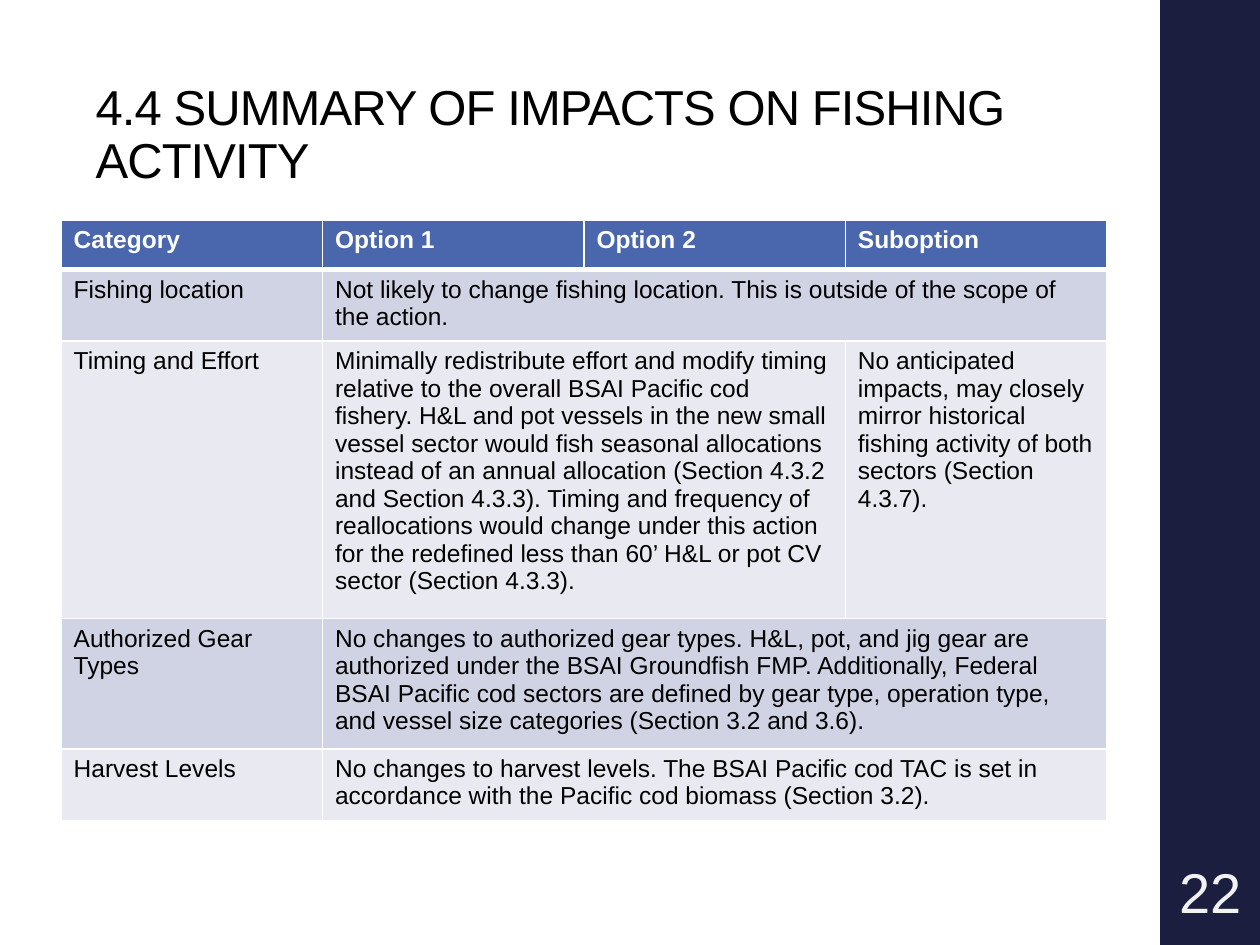
from typing import NamedTuple

from lxml.etree import SubElement
from pptx import Presentation
from pptx.dml.color import RGBColor
from pptx.enum.shapes import MSO_SHAPE
from pptx.enum.text import MSO_ANCHOR as Anchor, PP_ALIGN as Align
from pptx.oxml.ns import qn
from pptx.util import Pt

WHITE = RGBColor(0xFF, 0xFF, 0xFF)
BLACK = RGBColor(0, 0, 0)
NAVY = RGBColor(0x1B, 0x1E, 0x3E)
HEADER_BLUE = RGBColor(0x4A, 0x66, 0xAC)
BANDS = (RGBColor(0xD0, 0xD3, 0xE3), RGBColor(0xE9, 0xEA, 0xF1))
PALE_GREY = RGBColor(0xF2, 0xF2, 0xF2)
FONT_NAME = "Arial"
COLUMN_WIDTH = 149.4


class Entry(NamedTuple):
    text: str
    span: int = 1


class ImpactRow(NamedTuple):
    height: float
    entries: tuple[Entry, ...]


HEADER = ImpactRow(28.5, tuple(
    Entry(name) for name in ("Category", "Option 1", "Option 2", "Suboption")))
IMPACTS = (
    ImpactRow(38.5, (
        Entry("Fishing location"),
        Entry("Not likely to change fishing location. This is outside of the "
              "scope of the action.", 3))),
    ImpactRow(149, (
        Entry("Timing and Effort"),
        Entry("Minimally redistribute effort and modify timing relative to the "
              "overall BSAI Pacific cod fishery. H&L and pot vessels in the new "
              "small vessel sector would fish seasonal allocations instead of an "
              "annual allocation (Section 4.3.2 and Section 4.3.3). Timing and "
              "frequency of reallocations would change under this action for the "
              "redefined less than 60’ H&L or pot CV sector (Section 4.3.3).", 2),
        Entry("No anticipated impacts, may closely mirror historical fishing "
              "activity of both sectors (Section 4.3.7)."))),
    ImpactRow(70, (
        Entry("Authorized Gear Types"),
        Entry("No changes to authorized gear types. H&L, pot, and jig gear are "
              "authorized under the BSAI Groundfish FMP. Additionally, Federal "
              "BSAI Pacific cod sectors are defined by gear type, operation type, "
              "and vessel size categories (Section 3.2 and 3.6).", 3))),
    ImpactRow(38.5, (
        Entry("Harvest Levels"),
        Entry("No changes to harvest levels. The BSAI Pacific cod TAC is set in "
              "accordance with the Pacific cod biomass (Section 3.2).", 3))),
)


def style(font, size: float, color: RGBColor, bold: bool = False) -> None:
    font.name, font.size, font.bold = FONT_NAME, Pt(size), bold
    font.color.rgb = color


def add_label(slide, box: tuple, text: str, size: float, color: RGBColor,
              anchor: Anchor):
    """Add a wrapped one-paragraph text box and return its text frame."""
    frame = slide.shapes.add_textbox(*map(Pt, box)).text_frame
    frame.word_wrap = True
    frame.vertical_anchor = anchor
    frame.text = text
    style(frame.paragraphs[0].runs[0].font, size, color)
    return frame


def add_borders(cell, top: float, bottom: float) -> None:
    """Give the cell white borders; call before setting its fill."""
    properties = cell._tc.get_or_add_tcPr()
    for side, width in (("L", 1), ("R", 1), ("T", top), ("B", bottom)):
        line = SubElement(properties, qn(f"a:ln{side}"), w=str(Pt(width)))
        fill = SubElement(line, qn("a:solidFill"))
        SubElement(fill, qn("a:srgbClr"), val=str(WHITE))


def add_impact_table(slide, left: float, top: float) -> None:
    rows = (HEADER, *IMPACTS)
    column_count = len(HEADER.entries)
    table = slide.shapes.add_table(
        len(rows), column_count, Pt(left), Pt(top),
        Pt(COLUMN_WIDTH * column_count), Pt(sum(row.height for row in rows))).table
    for column in table.columns:
        column.width = Pt(COLUMN_WIDTH)

    for index, row in enumerate(rows):
        is_header = index == 0
        table.rows[index].height = Pt(row.height)
        for cell in table.rows[index].cells:
            add_borders(cell, 3 if index == 1 else 1, 3 if is_header else 1)
            cell.fill.solid()
            cell.fill.fore_color.rgb = (
                HEADER_BLUE if is_header else BANDS[(index - 1) % 2])
        start = 0
        for entry in row.entries:
            cell = table.cell(index, start)
            if entry.span > 1:
                cell.merge(table.cell(index, start + entry.span - 1))
            cell.text_frame.text = entry.text
            style(cell.text_frame.paragraphs[0].runs[0].font, 14,
                  WHITE if is_header else BLACK, is_header)
            start += entry.span


def main() -> None:
    deck = Presentation()
    deck.slide_width, deck.slide_height = Pt(720), Pt(540)
    slide = deck.slides.add_slide(deck.slide_layouts[6])

    sidebar = slide.shapes.add_shape(
        MSO_SHAPE.RECTANGLE, Pt(663), Pt(0), Pt(57), Pt(540))
    sidebar.shadow.inherit = False
    sidebar.fill.solid()
    sidebar.fill.fore_color.rgb = NAVY
    sidebar.line.fill.background()

    title = add_label(slide, (47.5, 32.4, 572.4, 79.2),
                      "4.4 SUMMARY OF IMPACTS ON FISHING ACTIVITY",
                      28, BLACK, Anchor.BOTTOM).paragraphs[0]
    title.line_spacing = 0.9
    title.runs[0]._r.get_or_add_rPr().set("spc", "-50")

    add_impact_table(slide, 34.9, 125.6)

    page_number = add_label(slide, (664.6, 486, 54, 46.8), "22", 32,
                            PALE_GREY, Anchor.MIDDLE)
    page_number.margin_left = page_number.margin_right = Pt(2.2)
    page_number.paragraphs[0].alignment = Align.CENTER

    deck.save("out.pptx")


if __name__ == "__main__":
    main()
